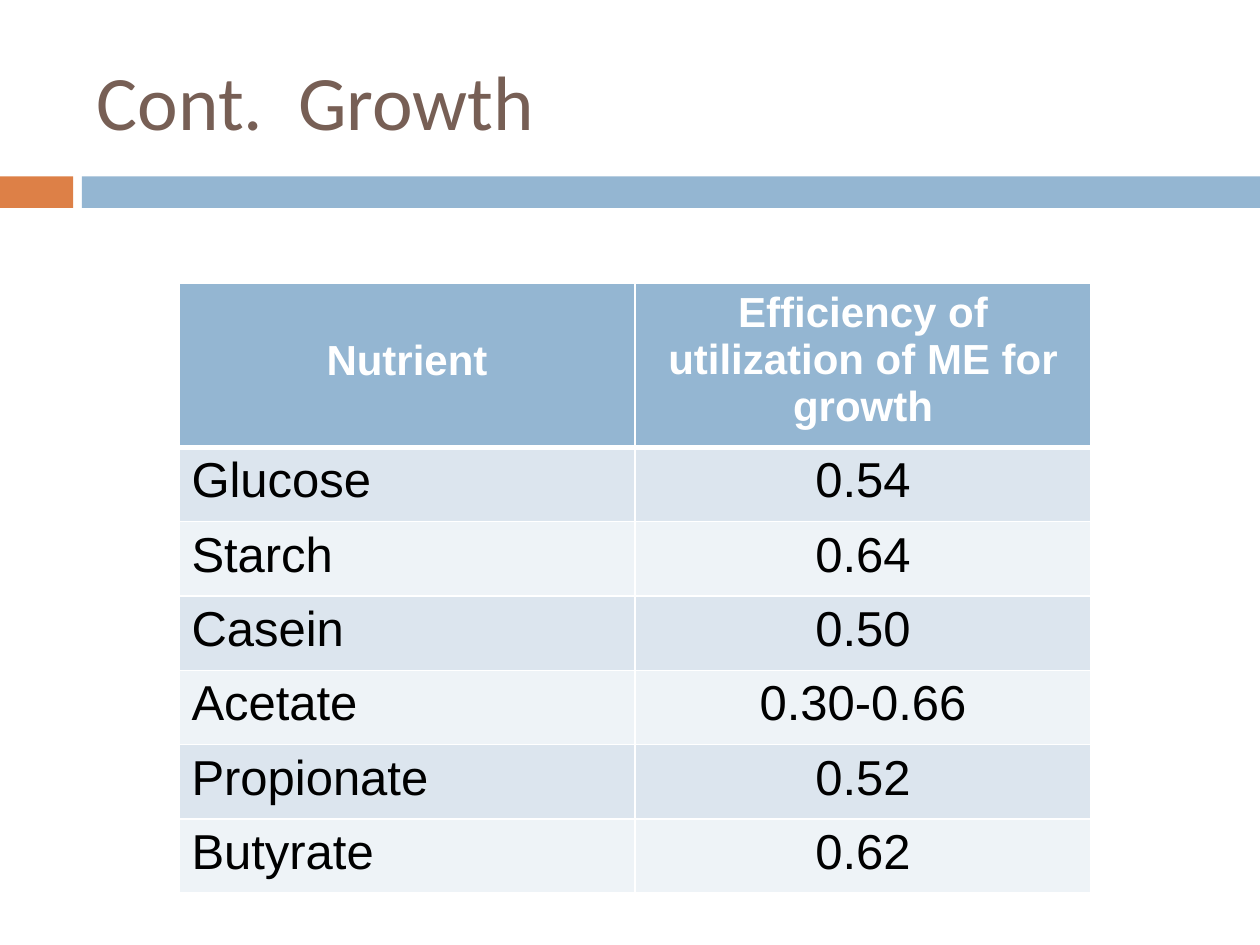
"""Build a slide with a table of nutrient efficiencies for growth."""
from dataclasses import dataclass

from lxml.etree import SubElement
from pptx import Presentation
from pptx.dml.color import RGBColor
from pptx.enum.shapes import MSO_SHAPE
from pptx.enum.text import MSO_ANCHOR, PP_ALIGN
from pptx.oxml.ns import qn
from pptx.util import Inches, Pt


@dataclass(frozen=True)
class Theme:
    orange: str = "DD8047"
    blue: str = "94B6D2"
    brown: str = "775F55"
    white: str = "FFFFFF"
    black: str = "000000"
    bands: tuple = ("DCE5EE", "EEF3F7")
    title_font: str = "Calibri"
    table_font: str = "Arial"
    title_size: int = 44
    header_size: int = 24
    body_size: int = 28
    rule: int = 1
    header_rule: int = 3


THEME = Theme()
HEADERS = ("Nutrient", "Efficiency of utilization of ME for growth")
ROWS = (
    ("Glucose", "0.54"),
    ("Starch", "0.64"),
    ("Casein", "0.50"),
    ("Acetate", "0.30-0.66"),
    ("Propionate", "0.52"),
    ("Butyrate", "0.62"),
)


def style_paragraph(p, font, size, color, bold=False, align=PP_ALIGN.LEFT):
    p.alignment = align
    p.font.name = font
    p.font.size = Pt(size)
    p.font.bold = bold
    p.font.color.rgb = RGBColor.from_string(color)


def add_bar(s, left, width, color):
    sp = s.shapes.add_shape(
        MSO_SHAPE.RECTANGLE, Inches(left), Inches(1.4), Inches(width), Inches(0.25))
    sp.shadow.inherit = False
    sp.fill.solid()
    sp.fill.fore_color.rgb = RGBColor.from_string(color)
    sp.line.fill.background()


def add_title(s, text):
    sp = s.shapes.add_textbox(Inches(0.67), Inches(0.25), Inches(8.92), Inches(1.08))
    tf = sp.text_frame
    tf.word_wrap = True
    tf.vertical_anchor = MSO_ANCHOR.MIDDLE
    p = tf.paragraphs[0]
    p.text = text
    style_paragraph(p, THEME.title_font, THEME.title_size, THEME.brown)


def set_borders(cell, top, bottom):
    tc_pr = cell._tc.get_or_add_tcPr()
    widths = {"a:lnL": THEME.rule, "a:lnR": THEME.rule, "a:lnT": top, "a:lnB": bottom}
    for tag, width in widths.items():
        ln = SubElement(tc_pr, qn(tag), w=str(Pt(width)))
        fill = SubElement(ln, qn("a:solidFill"))
        SubElement(fill, qn("a:srgbClr"), val=THEME.white)


def fill_cell(cell, text, row, col):
    header = row == 0
    set_borders(cell,
                THEME.header_rule if row == 1 else THEME.rule,
                THEME.header_rule if header else THEME.rule)
    cell.fill.solid()
    color = THEME.blue if header else THEME.bands[(row - 1) % 2]
    cell.fill.fore_color.rgb = RGBColor.from_string(color)
    p = cell.text_frame.paragraphs[0]
    p.text = text
    style_paragraph(
        p, THEME.table_font,
        THEME.header_size if header else THEME.body_size,
        THEME.white if header else THEME.black,
        bold=header,
        align=PP_ALIGN.CENTER if header or col else PP_ALIGN.LEFT)


def add_nutrient_table(s):
    data = (HEADERS,) + ROWS
    table = s.shapes.add_table(
        len(data), len(HEADERS),
        Inches(1.42), Inches(2.25), Inches(7.24), Inches(4.6)).table
    for i, values in enumerate(data):
        table.rows[i].height = Inches(0.59 if i else 1.04)
        for j, text in enumerate(values):
            fill_cell(table.cell(i, j), text, i, j)
    table.cell(0, 0).margin_top = Inches(0.43)


def main():
    prs = Presentation()
    prs.slide_width, prs.slide_height = Inches(10), Inches(7.5)
    s = prs.slides.add_slide(prs.slide_layouts[6])
    add_bar(s, 0, 0.58, THEME.orange)
    add_bar(s, 0.65, 9.35, THEME.blue)
    add_title(s, "Cont.  Growth")
    add_nutrient_table(s)
    prs.save("out.pptx")


if __name__ == "__main__":
    main()
